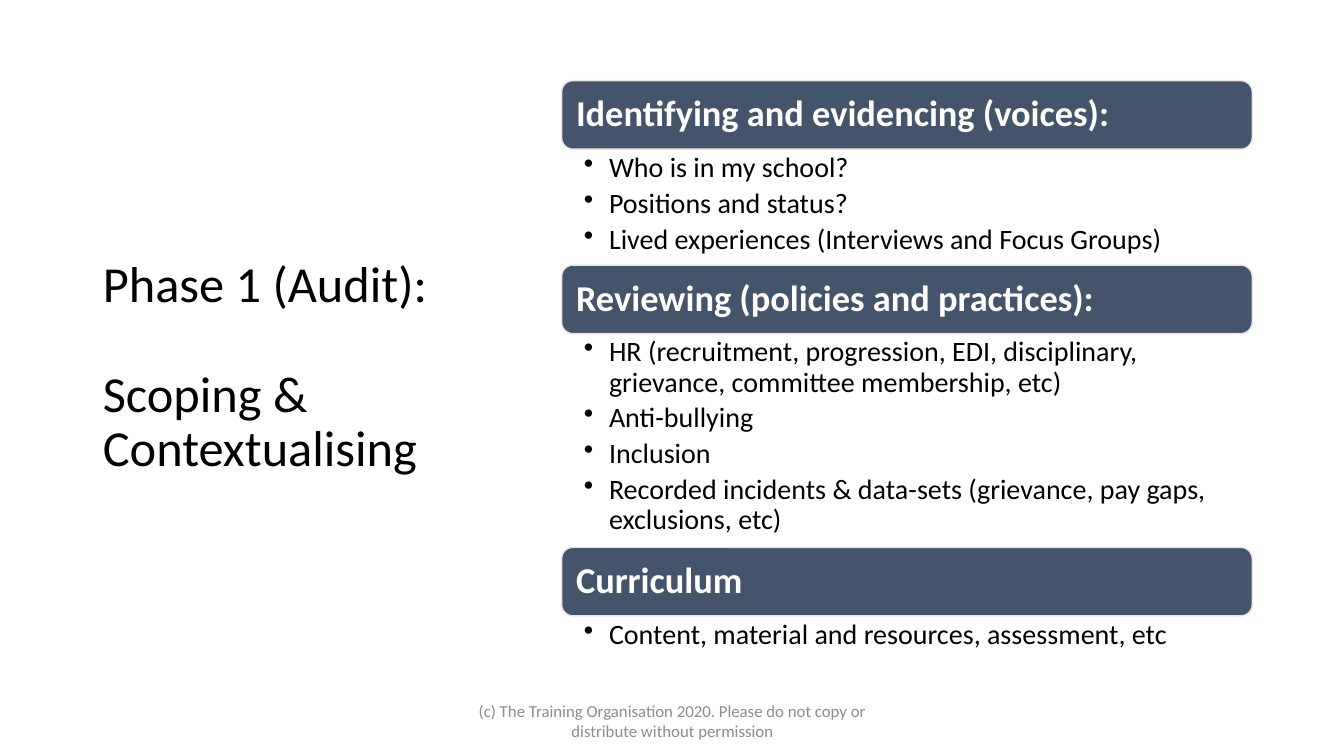
from lxml.etree import SubElement
from pptx import Presentation
from pptx.dml.color import RGBColor
from pptx.enum.shapes import MSO_SHAPE as Shape
from pptx.enum.text import MSO_ANCHOR as Anchor, PP_ALIGN as Align
from pptx.oxml.ns import qn
from pptx.util import Inches, Pt

COLORS = {"heading": "44546A", "outline": "E7E6E6", "white": "FFFFFF",
          "black": "000000", "footer": "8C8C8C"}
LEFT, WIDTH, HEADING_HEIGHT = 5.57, 6.85, 0.68

# Heading, height of the bullet area, bullets
SECTIONS = [
    ("Identifying and evidencing (voices):", 1.15, [
        "Who is in my school?",
        "Positions and status?",
        "Lived experiences (Interviews and Focus Groups)"]),
    ("Reviewing (policies and practices):", 2.12, [
        "HR (recruitment, progression, EDI, disciplinary, grievance, "
        "committee membership, etc)",
        "Anti-bullying",
        "Inclusion",
        "Recorded incidents & data-sets (grievance, pay gaps, exclusions, etc)"]),
    ("Curriculum", 0.47, ["Content, material and resources, assessment, etc"]),
]


def rgb(name):
    return RGBColor.from_string(COLORS[name])


def format_text(frame, size, color, align=Align.LEFT, bold=False, spacing=0.9):
    frame.word_wrap = True
    for paragraph in frame.paragraphs:
        paragraph.alignment = align
        paragraph.line_spacing = spacing
        for run in paragraph.runs:
            run.font.name = "Calibri"
            run.font.size = Pt(size)
            run.font.bold = bold
            run.font.color.rgb = rgb(color)


presentation = Presentation()
presentation.slide_width = Inches(13.33)
presentation.slide_height = Inches(7.5)
slide = presentation.slides.add_slide(presentation.slide_layouts[5])

# Title
title = slide.shapes.title
title.left, title.top = Inches(0.92), Inches(0.61)
title.width, title.height = Inches(3.96), Inches(6.09)
title.text_frame.text = "Phase 1 (Audit):\nScoping & Contextualising"
title.text_frame.vertical_anchor = Anchor.MIDDLE
format_text(title.text_frame, 36, "black")
for paragraph in title.text_frame.paragraphs:
    paragraph.space_before = Pt(0)
title.text_frame.paragraphs[1].space_before = Pt(39)

# Headings stacked with their bullet lists
top = 0.8
for heading, list_height, bullets in SECTIONS:
    bar = slide.shapes.add_shape(
        Shape.ROUNDED_RECTANGLE, Inches(LEFT), Inches(top),
        Inches(WIDTH), Inches(HEADING_HEIGHT))
    bar.shadow.inherit = False
    bar.fill.solid()
    bar.fill.fore_color.rgb = rgb("heading")
    bar.line.color.rgb = rgb("outline")
    bar.line.width = Pt(1)
    frame = bar.text_frame
    frame.text = heading
    frame.vertical_anchor = Anchor.MIDDLE
    frame.margin_left = frame.margin_right = Inches(0.11)
    format_text(frame, 26, "white", bold=True)
    top += HEADING_HEIGHT

    bullet_list = slide.shapes.add_textbox(
        Inches(LEFT), Inches(top), Inches(WIDTH), Inches(list_height))
    frame = bullet_list.text_frame
    frame.text = "\n".join(bullets)
    frame.margin_left, frame.margin_right = Inches(0.22), Inches(0.2)
    frame.margin_top = frame.margin_bottom = Inches(0.04)
    format_text(frame, 20, "black")
    for paragraph in frame.paragraphs:
        paragraph.level = 1
        paragraph.space_after = Pt(4)
        properties = paragraph._p.get_or_add_pPr()
        properties.set("marL", str(Inches(0.25)))
        properties.set("indent", str(Inches(-0.25)))
        SubElement(properties, qn("a:buChar")).set("char", "•")
    top += list_height

# Footer
footer = slide.shapes.add_textbox(
    Inches(4.42), Inches(6.95), Inches(4.5), Inches(0.4))
footer.text_frame.text = ("(c) The Training Organisation 2020. "
                          "Please do not copy or distribute without permission")
footer.text_frame.vertical_anchor = Anchor.MIDDLE
format_text(footer.text_frame, 12, "footer", Align.CENTER, spacing=1.0)

presentation.save("out.pptx")
